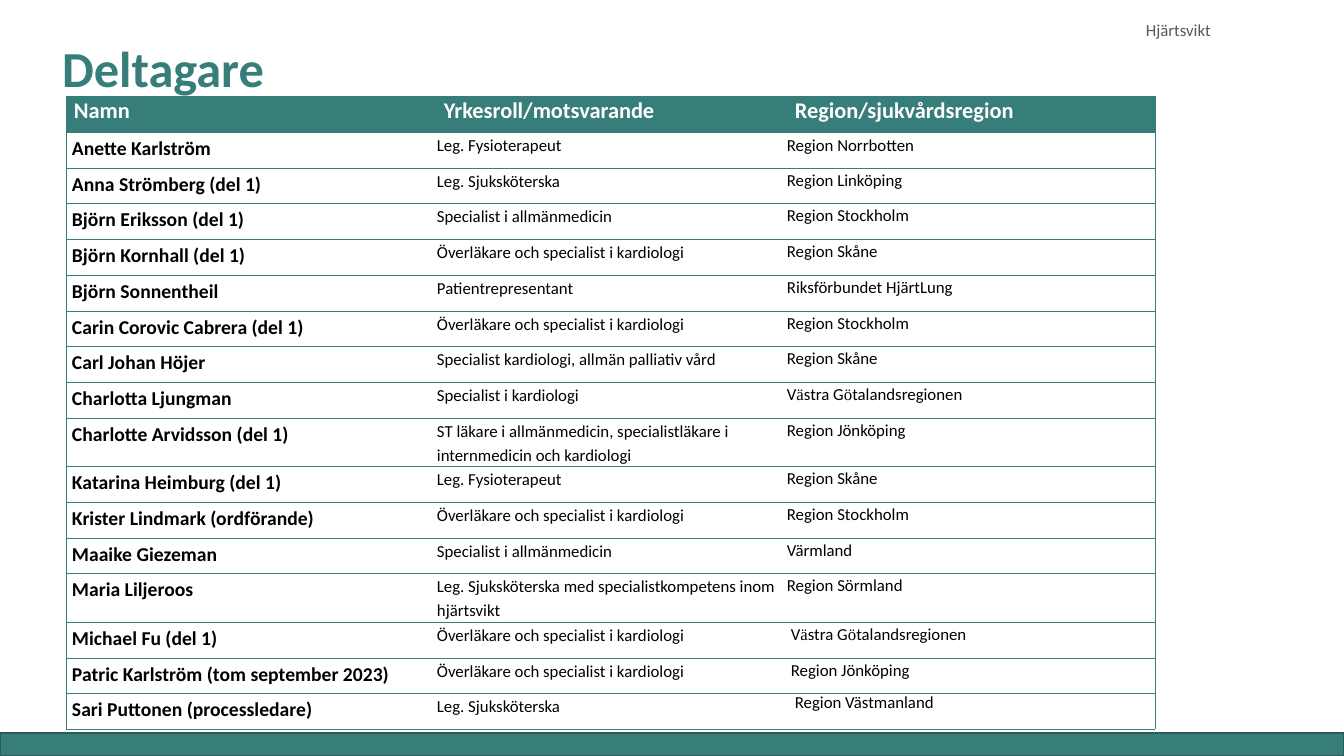
import dataclasses
import itertools

import pptx
import pptx.dml.color
import pptx.enum.shapes
import pptx.enum.text
import pptx.oxml
import pptx.oxml.ns
import pptx.util

PX = 12192000 / 1344  # EMU in one px
ANCHOR = pptx.enum.text.MSO_ANCHOR


@dataclasses.dataclass(frozen=True)
class Theme:
    font: str = "Calibri"
    accent_font: str = "Times New Roman"
    teal: str = "377D7A"
    dark_teal: str = "295C5A"
    black: str = "000000"
    grey: str = "595959"
    white: str = "FFFFFF"
    title: float = 36
    header: float = 16
    name: float = 14
    body: float = 12


THEME = Theme()


def px(length):
    return pptx.util.Emu(round(length * PX))


def rgb(colour):
    return pptx.dml.color.RGBColor.from_string(colour)


def write(frame, text, *, size, colour=THEME.black, bold=False, spacing=None,
          anchor=ANCHOR.TOP, mixed_fonts=False):
    """Fill a text frame; mixed_fonts sets ä and ö in the accent font."""
    frame.word_wrap = True
    frame.vertical_anchor = anchor
    paragraph = frame.paragraphs[0]
    paragraph.alignment = pptx.enum.text.PP_ALIGN.LEFT
    paragraph.line_spacing = spacing
    pieces = itertools.groupby(text, lambda c: mixed_fonts and c in "äö")
    for accented, letters in pieces:
        run = paragraph.add_run()
        run.text = "".join(letters)
        run.font.name = THEME.accent_font if accented else THEME.font
        run.font.size = pptx.util.Pt(size)
        run.font.bold = bold
        run.font.color.rgb = rgb(colour)


class SlideBuilder:
    def __init__(self, slide, theme):
        self.slide = slide
        self.theme = theme

    def title(self, text, left, top, width, height):
        heading = self.slide.shapes.title
        heading.left, heading.top = px(left), px(top)
        heading.width, heading.height = px(width), px(height)
        heading.text_frame.auto_size = pptx.enum.text.MSO_AUTO_SIZE.NONE
        write(heading.text_frame, text, size=self.theme.title, bold=True,
              colour=self.theme.teal, spacing=0.9, anchor=ANCHOR.MIDDLE)

    def text(self, text, left, top, width, height, **style):
        box = self.slide.shapes.add_textbox(*map(px, (left, top, width, height)))
        write(box.text_frame, text, **style)

    def bar(self, left, top, width, height):
        band = self.slide.shapes.add_shape(
            pptx.enum.shapes.MSO_SHAPE.RECTANGLE, *map(px, (left, top, width, height)))
        band.shadow.inherit = False
        band.fill.solid()
        band.fill.fore_color.rgb = rgb(self.theme.teal)
        band.line.color.rgb = rgb(self.theme.dark_teal)
        band.line.width = pptx.util.Pt(1)

    def table(self, left, top, widths, heights):
        grid = self.slide.shapes.add_table(
            len(heights), len(widths),
            *map(px, (left, top, sum(widths), sum(heights)))).table
        grid.horz_banding = False
        for column, width in zip(grid.columns, widths):
            column.width = px(width)
        for row, height in zip(grid.rows, heights):
            row.height = px(height)
        return grid

    def cell(self, cell, text, fill, drawn_sides, insets, **style):
        properties = cell._tc.get_or_add_tcPr()
        for side in "LRTB":
            paint = (f'<a:solidFill><a:srgbClr val="{self.theme.teal}"/></a:solidFill>'
                     if side in drawn_sides else "<a:noFill/>")
            properties.append(pptx.oxml.parse_xml(
                f'<a:ln{side} {pptx.oxml.ns.nsdecls("a")} w="6350">{paint}</a:ln{side}>'))
        cell.fill.solid()
        cell.fill.fore_color.rgb = rgb(fill)
        (cell.margin_left, cell.margin_top,
         cell.margin_right, cell.margin_bottom) = map(px, insets)
        write(cell.text_frame, text, **style)


HEADER = ("Namn", "Yrkesroll/motsvarande", "Region/sjukvårdsregion")
CARDIOLOGIST = "Överläkare och specialist i kardiologi"
VASTRA_GOTALAND = "Västra Götalandsregionen"
PARTICIPANTS = [
    ("Anette Karlström", "Leg. Fysioterapeut", "Region Norrbotten"),
    ("Anna Strömberg (del 1)", "Leg. Sjuksköterska", "Region Linköping"),
    ("Björn Eriksson (del 1)", "Specialist i allmänmedicin", "Region Stockholm"),
    ("Björn Kornhall (del 1)", CARDIOLOGIST, "Region Skåne"),
    ("Björn Sonnentheil", "Patientrepresentant", "Riksförbundet HjärtLung"),
    ("Carin Corovic Cabrera (del 1)", CARDIOLOGIST, "Region Stockholm"),
    ("Carl Johan Höjer", "Specialist kardiologi, allmän palliativ vård", "Region Skåne"),
    ("Charlotta Ljungman", "Specialist i kardiologi", VASTRA_GOTALAND),
    ("Charlotte Arvidsson (del 1)",
     "ST läkare i allmänmedicin, specialistläkare i internmedicin och kardiologi",
     "Region Jönköping"),
    ("Katarina Heimburg (del 1)", "Leg. Fysioterapeut", "Region Skåne"),
    ("Krister Lindmark (ordförande)", CARDIOLOGIST, "Region Stockholm"),
    ("Maaike Giezeman", "Specialist i allmänmedicin", "Värmland"),
    ("Maria Liljeroos", "Leg. Sjuksköterska med specialistkompetens inom hjärtsvikt",
     "Region Sörmland"),
    ("Michael Fu (del 1)", CARDIOLOGIST, VASTRA_GOTALAND),
    ("Patric Karlström (tom september 2023)", CARDIOLOGIST, "Region Jönköping"),
    ("Sari Puttonen (processledare)", "Leg. Sjuksköterska", "Region Västmanland"),
]
REGION_INDENTS = {"Michael Fu (del 1)": 4, "Patric Karlström (tom september 2023)": 4,
                  "Sari Puttonen (processledare)": 8}
TWO_LINE_ROLE = 50  # letters from which a role wraps


def add_participants(builder):
    theme = builder.theme
    natural = [36] + [48.5 if len(role) > TWO_LINE_ROLE else 35.72
                      for _, role, _ in PARTICIPANTS]
    edges = [round(edge) for edge in itertools.accumulate(natural, initial=0)]
    heights = [below - above for above, below in itertools.pairwise(edges)]
    grid = builder.table(66, 96, (370, 351, 368), heights)
    sides = ("LTB", "TB", "RTB")

    # Header row
    for column, label in enumerate(HEADER):
        builder.cell(grid.cell(0, column), label, theme.teal, sides[column],
                     size=theme.header, colour=theme.white, bold=True,
                     spacing=1.06, insets=(8, 0, 8, 0))

    # One row for each participant
    for row, participant in enumerate(PARTICIPANTS, 1):
        indent = REGION_INDENTS.get(participant[0], 0)
        insets = ((6, 1, 6, 0), (1, 1, 1, 0), (indent, 0, 0, 0))
        for column, text in enumerate(participant):
            last_region = row == len(PARTICIPANTS) and column == 2
            builder.cell(grid.cell(row, column), text, theme.white, sides[column],
                         size=theme.body if column else theme.name,
                         bold=column == 0, spacing=None if last_region else 1.15,
                         insets=insets[column], mixed_fonts=text == VASTRA_GOTALAND)


def main():
    deck = pptx.Presentation()
    deck.slide_width, deck.slide_height = px(1344), px(756)
    builder = SlideBuilder(deck.slides.add_slide(deck.slide_layouts[5]), THEME)

    # Footer band
    builder.bar(0, 733, 1344, 23)

    # Title, participants and topic
    builder.title("Deltagare", 52, 30, 1159, 83)
    add_participants(builder)
    builder.text("Hjärtsvikt", 1136, 15, 171, 30, size=THEME.body, colour=THEME.grey)

    deck.save("out.pptx")


if __name__ == "__main__":
    main()
